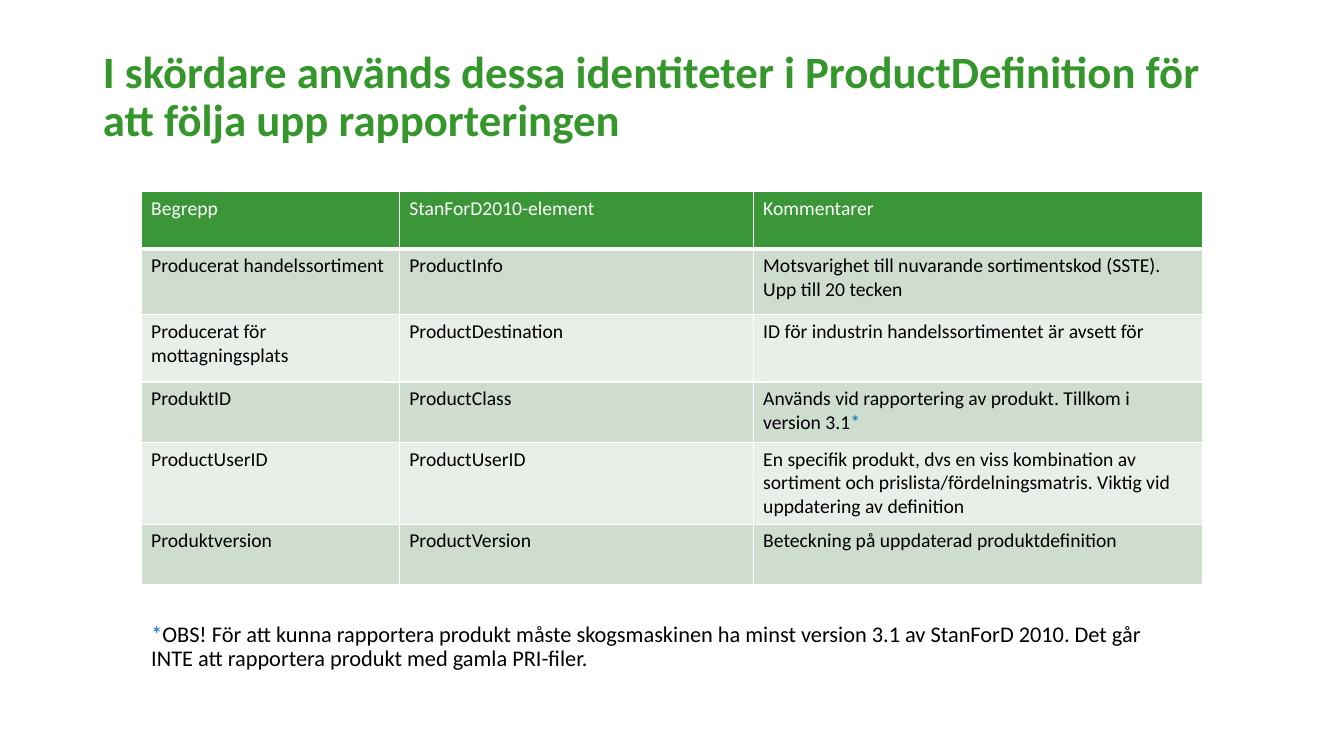
from lxml.etree import SubElement
from pptx import Presentation
from pptx.dml.color import RGBColor
from pptx.enum.text import MSO_ANCHOR, MSO_AUTO_SIZE, PP_ALIGN
from pptx.oxml.ns import qn
from pptx.util import Inches, Pt

# Content: each text is a list of (words, colour) spans
TITLE_GREEN = RGBColor(0x35, 0x96, 0x2B)
HEAD_GREEN = RGBColor(0x3B, 0x96, 0x37)
BANDS = [RGBColor(0xCE, 0xDD, 0xCE), RGBColor(0xE8, 0xEF, 0xE8)]
BLUE = RGBColor(0x00, 0x70, 0xC0)
BLACK = RGBColor(0x00, 0x00, 0x00)
WHITE = RGBColor(0xFF, 0xFF, 0xFF)
FONT = "Calibri"

STAR = ("*", BLUE)
TITLE = "I skördare används dessa identiteter i ProductDefinition för att följa upp rapporteringen"
NOTE = ("OBS! För att kunna rapportera produkt måste skogsmaskinen ha minst version 3.1 "
        "av StanForD 2010. Det går INTE att rapportera produkt med gamla PRI-filer.")
ROWS = [
    ("Begrepp", "StanForD2010-element", "Kommentarer"),
    ("Producerat handelssortiment", "ProductInfo",
     "Motsvarighet till nuvarande sortimentskod (SSTE). Upp till 20 tecken"),
    ("Producerat för mottagningsplats", "ProductDestination",
     "ID för industrin handelssortimentet är avsett för"),
    ("ProduktID", "ProductClass",
     "Används vid rapportering av produkt. Tillkom i version 3.1*"),
    ("ProductUserID", "ProductUserID",
     "En specifik produkt, dvs en viss kombination av sortiment och "
     "prislista/fördelningsmatris. Viktig vid uppdatering av definition"),
    ("Produktversion", "ProductVersion", "Beteckning på uppdaterad produktdefinition"),
]

# Layout in inches
SLIDE_SIZE = (13.33, 7.5)
TITLE_BOX = (0.92, 0.4, 11.29, 1.15)
NOTE_BOX = (1.4, 6.13, 10.1, 0.59)
TABLE_LEFT, TABLE_TOP = 1.4, 1.9
COLUMN_WIDTHS = [2.56, 3.51, 4.46]
ROW_HEIGHTS = [0.57, 0.65, 0.67, 0.6, 0.6, 0.6]


def write(frame, spans, size, bold=False, line=None, before=None):
    para = frame.paragraphs[0]
    para.alignment = PP_ALIGN.LEFT
    if line:
        para.line_spacing = line
    if before is not None:
        para.space_before = Pt(before)
    for words, colour in spans:
        span = para.add_run()
        span.text = words
        span.font.name, span.font.size, span.font.bold = FONT, Pt(size), bold
        span.font.color.rgb = colour
    return para


def place(box, area, anchor):
    box.left, box.top, box.width, box.height = map(Inches, area)
    frame = box.text_frame
    frame.word_wrap = True
    frame.auto_size = MSO_AUTO_SIZE.NONE
    frame.vertical_anchor = anchor
    return frame


def add_borders(cell, top, bottom):
    properties = cell._tc.get_or_add_tcPr()
    for index, (side, width) in enumerate(
            [("lnL", 1), ("lnR", 1), ("lnT", top), ("lnB", bottom)]):
        border = SubElement(properties, qn(f"a:{side}"), w=str(Pt(width)))
        fill = SubElement(border, qn("a:solidFill"))
        SubElement(fill, qn("a:srgbClr"), val=str(WHITE))
        properties.insert(index, border)


def main():
    deck = Presentation()
    deck.slide_width, deck.slide_height = map(Inches, SLIDE_SIZE)
    page = deck.slides.add_slide(deck.slide_layouts[1])

    # Title
    frame = place(page.shapes.title, TITLE_BOX, MSO_ANCHOR.MIDDLE)
    write(frame, [(TITLE, TITLE_GREEN)], 32, bold=True, line=0.9)

    # Footnote in the body placeholder, without bullet
    frame = place(page.placeholders[1], NOTE_BOX, MSO_ANCHOR.TOP)
    para = write(frame, [STAR, (NOTE, BLACK)], 16, line=0.9, before=10)
    properties = para._p.get_or_add_pPr()
    properties.set("marL", "0")
    properties.set("indent", "0")
    SubElement(properties, qn("a:buNone"))

    # Table
    table = page.shapes.add_table(
        len(ROWS), len(COLUMN_WIDTHS), Inches(TABLE_LEFT), Inches(TABLE_TOP),
        Inches(sum(COLUMN_WIDTHS)), Inches(sum(ROW_HEIGHTS))).table
    for column, width in zip(table.columns, COLUMN_WIDTHS):
        column.width = Inches(width)
    for number, (row, height, texts) in enumerate(zip(table.rows, ROW_HEIGHTS, ROWS)):
        row.height = Inches(height)
        is_head = number == 0
        for cell, words in zip(row.cells, texts):
            cell.fill.solid()
            cell.fill.fore_color.rgb = HEAD_GREEN if is_head else BANDS[(number - 1) % 2]
            add_borders(cell, top=3 if number == 1 else 1, bottom=3 if is_head else 1)
            spans = [(words.rstrip("*"), WHITE if is_head else BLACK)]
            if words.endswith("*"):
                spans.append(STAR)
            write(cell.text_frame, spans, 14)

    deck.save("out.pptx")


if __name__ == "__main__":
    main()
